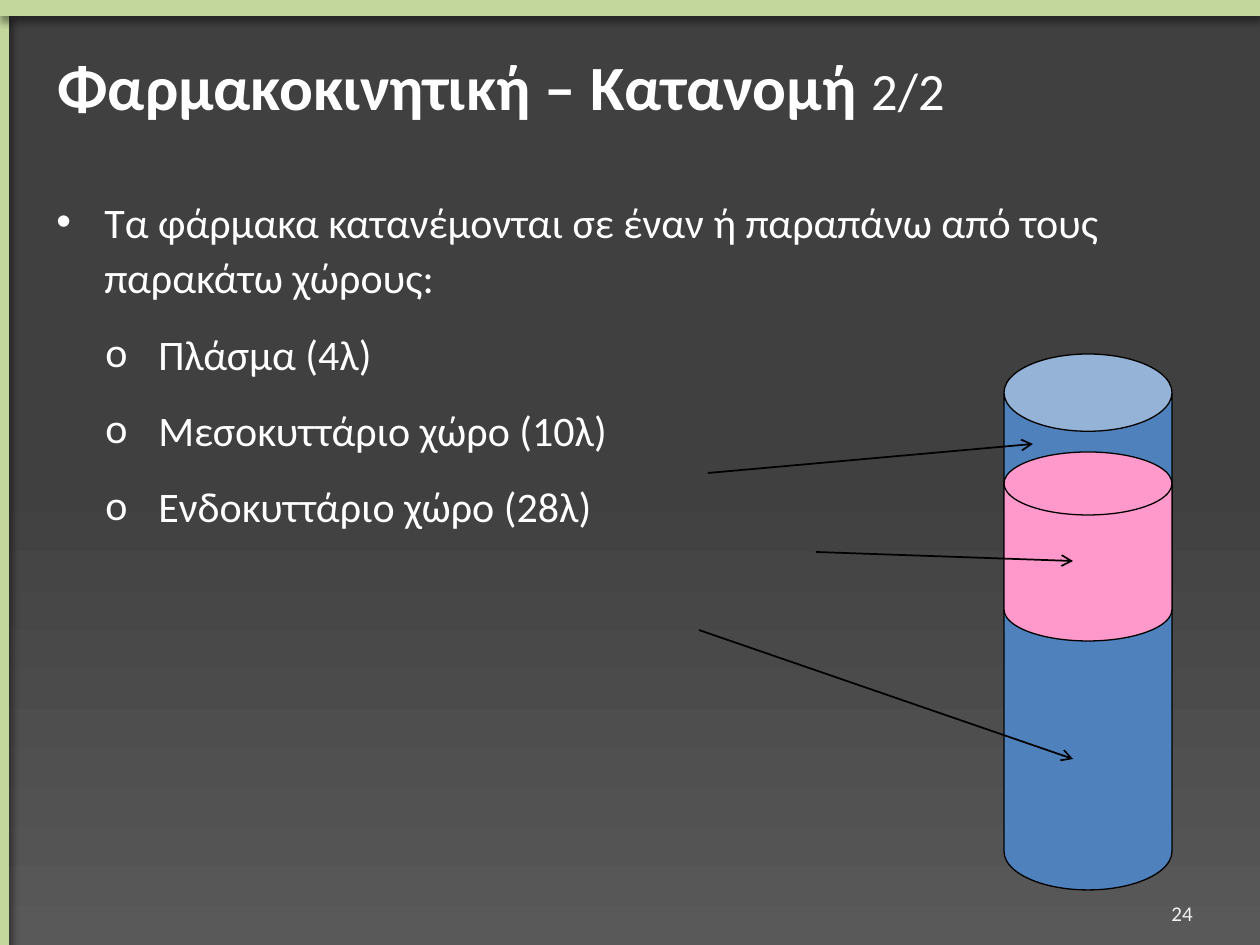
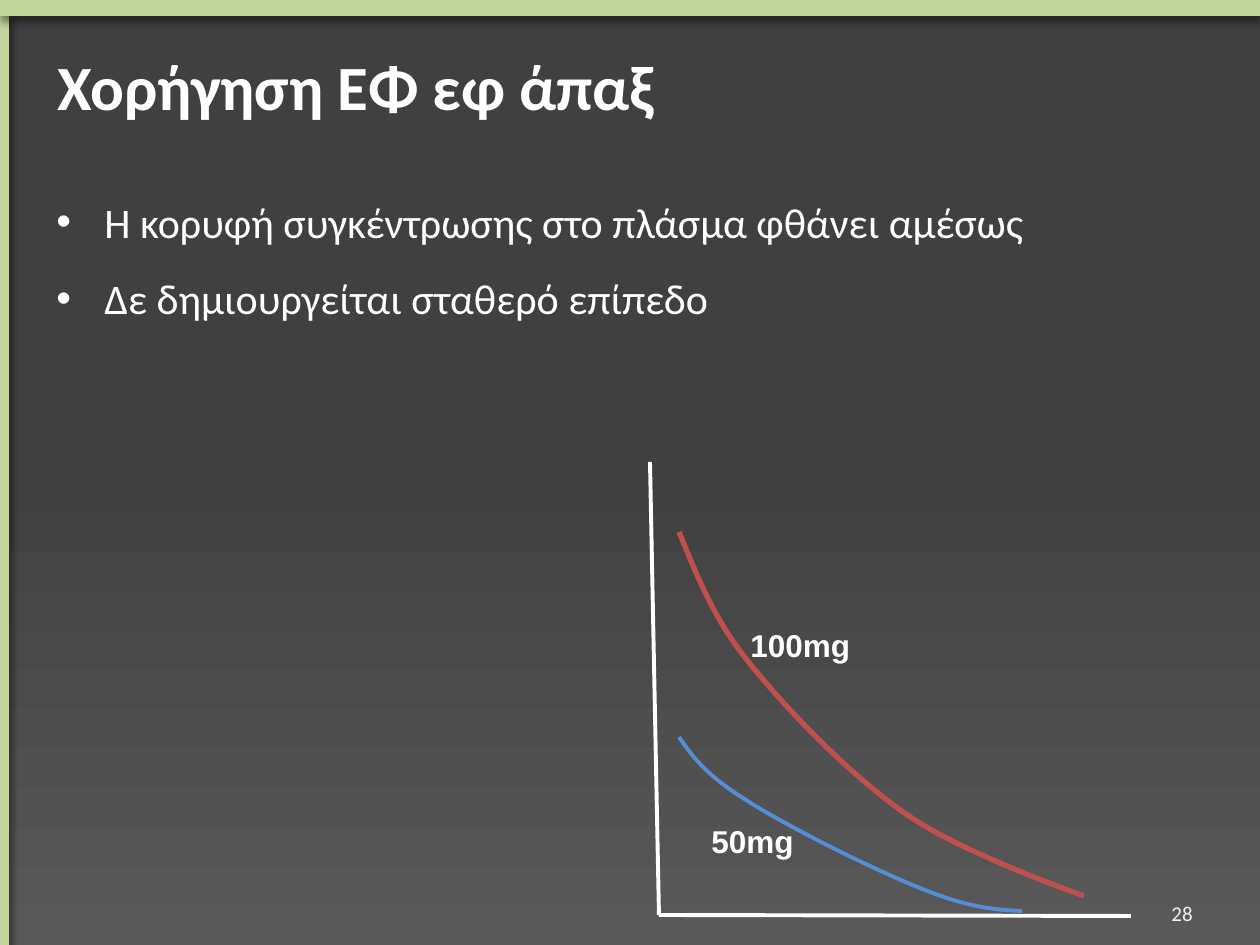
from lxml import etree
from pptx import Presentation
from pptx.dml.color import RGBColor
from pptx.enum.shapes import MSO_CONNECTOR, MSO_SHAPE
from pptx.enum.text import MSO_ANCHOR, MSO_AUTO_SIZE, PP_ALIGN
from pptx.oxml.ns import qn
from pptx.util import Pt

RECT, CAN, DISK = (MSO_SHAPE.RECTANGLE, MSO_SHAPE.CAN,
                   MSO_SHAPE.FLOWCHART_MAGNETIC_DISK)
STRAIGHT = MSO_CONNECTOR.STRAIGHT
TOP, MIDDLE = MSO_ANCHOR.TOP, MSO_ANCHOR.MIDDLE
LEFT, RIGHT = PP_ALIGN.LEFT, PP_ALIGN.RIGHT
GROW = MSO_AUTO_SIZE.SHAPE_TO_FIT_TEXT

EMU_PER_PX = 914400 / 126
SLIDE = (1260, 945)
WHITE, BLACK, PAGE_GREY = "FFFFFF", "000000", "F2F2F2"
DARK, LIGHTER, BAND = "404040", "595959", "C3D69B"
BLUE, PINK, RED_CURVE, BLUE_CURVE = "4F81BD", "FF99CC", "C0504D", "558ED5"

# Band box and the direction of its shadow in degrees
BANDS = [((0, 16, 9, 929), 45), ((0, 0, 1260, 16), 90)]
TITLE_BOX, BODY_BOX = (9, 16, 1251, 139), (44, 185, 1160, 725)
PAGE_BOX = (911, 888, 294, 50)

TITLE = {"name": "Calibri", "size": Pt(36), "bold": True}
TITLE_PART = {"name": "Calibri", "size": Pt(30), "bold": False}
BODY = {"name": "Calibri", "size": Pt(24)}
PAGE = {"name": "Calibri", "size": Pt(12)}
DOSE = {"name": "Arial", "size": Pt(18), "bold": True}

BODY_SPACING = {"line_spacing": 1.1, "space_before": Pt(12)}
# Left margin, hanging indent, bullet and its font for each level
LEVELS = [(48, -48, "•", "Arial"), (102, -53, "o", "Calibri")]


def px(length):
    return round(length * EMU_PER_PX)


def rgb(colour):
    return RGBColor.from_string(colour)


def apply(target, values):
    for attribute, value in values.items():
        setattr(target, attribute, value)


def sub(parent, tag, **attributes):
    return etree.SubElement(parent, qn(tag), attributes)


# Basic parts
def set_line(part, colour, points):
    part.line.color.rgb = rgb(colour)
    part.line.width = Pt(points)


def add_solid(slide, kind, box, colour):
    solid = slide.shapes.add_shape(kind, *map(px, box))
    solid.shadow.inherit = False
    solid.fill.solid()
    solid.fill.fore_color.rgb = rgb(colour)
    return solid


def add_line(slide, start, end, colour, points, arrow=False):
    line = slide.shapes.add_connector(STRAIGHT, *map(px, start + end))
    set_line(line, colour, points)
    properties = line._element.spPr
    if arrow:
        sub(properties.find(qn("a:ln")), "a:tailEnd", type="arrow")
    sub(properties, "a:effectLst")


def add_text_frame(slide, box, anchor=TOP):
    frame = slide.shapes.add_textbox(*map(px, box)).text_frame
    apply(frame, {"word_wrap": True, "vertical_anchor": anchor})
    return frame


def add_run(paragraph, text, font, colour=WHITE):
    run = paragraph.add_run()
    run.text = text
    apply(run.font, font)
    run.font.color.rgb = rgb(colour)


def indent(paragraph, margin, hanging=0):
    properties = paragraph._p.get_or_add_pPr()
    properties.set("marL", str(px(margin)))
    properties.set("indent", str(px(hanging)))
    return properties


def add_curve(slide, points, colour, width):
    """Draw a cubic curve: a start point, then three points per segment."""
    points = [(px(x), px(y)) for x, y in points]
    builder = slide.shapes.build_freeform(*points[0])
    builder.add_line_segments(points[1:], close=False)
    curve = builder.convert_to_shape()
    curve.shadow.inherit = False
    curve.fill.background()
    set_line(curve, colour, width)
    # Join every three straight steps into one Bezier segment
    steps = list(curve._element.iter(qn("a:lnTo")))
    for first in range(0, len(steps), 3):
        bezier = etree.Element(qn("a:cubicBezTo"))
        steps[first].addprevious(bezier)
        for step in steps[first:first + 3]:
            bezier.append(step[0])
            step.getparent().remove(step)


# Regions shared by the slides
def add_background(slide):
    fill = slide.background.fill
    fill.gradient()
    fill.gradient_angle = 270
    for stop, position, colour in zip(fill.gradient_stops, (0.5, 1),
                                      (DARK, LIGHTER)):
        stop.position = position
        stop.color.rgb = rgb(colour)


def add_bands(slide):
    for box, direction in BANDS:
        band = add_solid(slide, RECT, box, BAND)
        band.line.fill.background()
        effects = band._element.spPr.find(qn("a:effectLst"))
        shadow = sub(effects, "a:outerShdw", blurRad=str(Pt(4)),
                     dist=str(Pt(3)), dir=str(direction * 60000),
                     algn="t", rotWithShape="0")
        sub(sub(shadow, "a:srgbClr", val=BLACK), "a:alpha", val="40000")


def add_title(slide, box, title, part):
    paragraph = add_text_frame(slide, box, MIDDLE).paragraphs[0]
    indent(paragraph, 36)
    add_run(paragraph, title, TITLE)
    if part:
        add_run(paragraph, part, TITLE_PART)


def add_body(slide, box, items):
    frame = add_text_frame(slide, box)
    for number, (level, text) in enumerate(items):
        paragraph = frame.add_paragraph() if number else frame.paragraphs[0]
        apply(paragraph, BODY_SPACING | {"level": level})
        margin, hanging, bullet, bullet_font = LEVELS[level]
        properties = indent(paragraph, margin, hanging)
        sub(properties, "a:buFont", typeface=bullet_font)
        sub(properties, "a:buChar", char=bullet)
        add_run(paragraph, text, BODY)


def add_page_number(slide, box, number):
    paragraph = add_text_frame(slide, box, MIDDLE).paragraphs[0]
    paragraph.alignment = RIGHT
    add_run(paragraph, str(number), PAGE, PAGE_GREY)


def add_content_slide(deck, title, part, items):
    slide = deck.slides.add_slide(deck.slide_layouts[6])
    add_background(slide)
    add_bands(slide)
    add_title(slide, TITLE_BOX, title, part)
    add_body(slide, BODY_BOX, items)
    return slide


# Fluid compartments as a stacked cylinder, with an arrow to each
def add_compartments(slide, box):
    left, top, width, height = box
    body = add_solid(slide, CAN, box, BLUE)
    body.adjustments[0] = 0.46
    interstitial = add_solid(slide, DISK, (left, top + 98, width, 189), PINK)
    for part in (body, interstitial):
        set_line(part, BLACK, 0.75)
    arrows = [((-296, 119), (29, 90)), ((-188, 198), (69, 207)),
              ((-305, 276), (69, 405))]
    for (x1, y1), (x2, y2) in arrows:
        add_line(slide, (left + x1, top + y1), (left + x2, top + y2),
                 BLACK, 1, arrow=True)


# Plasma concentration after a single dose
def add_dose_graph(slide, left, top):
    def place(*points):
        return [(left + x, top + y) for x, y in points]

    high_dose = place((29, 70), (47, 113), (63, 157), (101, 203),
                      (139, 250), (201, 314), (256, 352),
                      (311, 391), (434, 434), (434, 434))
    low_dose = place((29, 275), (42, 294), (56, 313), (96, 338),
                     (138, 365), (228, 410), (275, 428),
                     (320, 446), (347, 448), (372, 449))
    peak, zero, end = place((0, 0), (9, 453), (481, 454))
    add_curve(slide, high_dose, RED_CURVE, 3)
    add_line(slide, peak, zero, WHITE, 2.25)
    add_line(slide, zero, end, WHITE, 2.25)
    add_curve(slide, low_dose, BLUE_CURVE, 2.25)
    corners = place((88, 158), (49, 354))
    for dose, corner in zip(("100mg", "50mg"), corners):
        frame = add_text_frame(slide, corner + (137, 50))
        frame.auto_size = GROW
        frame.paragraphs[0].alignment = LEFT
        add_run(frame.paragraphs[0], dose, DOSE)


def main():
    deck = Presentation()
    deck.slide_width, deck.slide_height = map(px, SLIDE)

    distribution = add_content_slide(
        deck, "Φαρμακοκινητική – Κατανομή ", "2/2",
        [(0, "Τα φάρμακα κατανέμονται σε έναν ή παραπάνω από τους "
             "παρακάτω χώρους:"),
         (1, "Πλάσμα (4λ)"),
         (1, "Μεσοκυττάριο χώρο (10λ)"),
         (1, "Ενδοκυττάριο χώρο (28λ)")])
    add_compartments(distribution, (1004, 354, 168, 536))
    add_page_number(distribution, PAGE_BOX, 24)

    single_dose = add_content_slide(
        deck, "Χορήγηση ΕΦ εφ άπαξ", "",
        [(0, "Η κορυφή συγκέντρωσης στο πλάσμα φθάνει αμέσως"),
         (0, "Δε δημιουργείται σταθερό επίπεδο")])
    add_dose_graph(single_dose, 650, 462)
    add_page_number(single_dose, PAGE_BOX, 28)

    deck.save("out.pptx")


if __name__ == "__main__":
    main()
